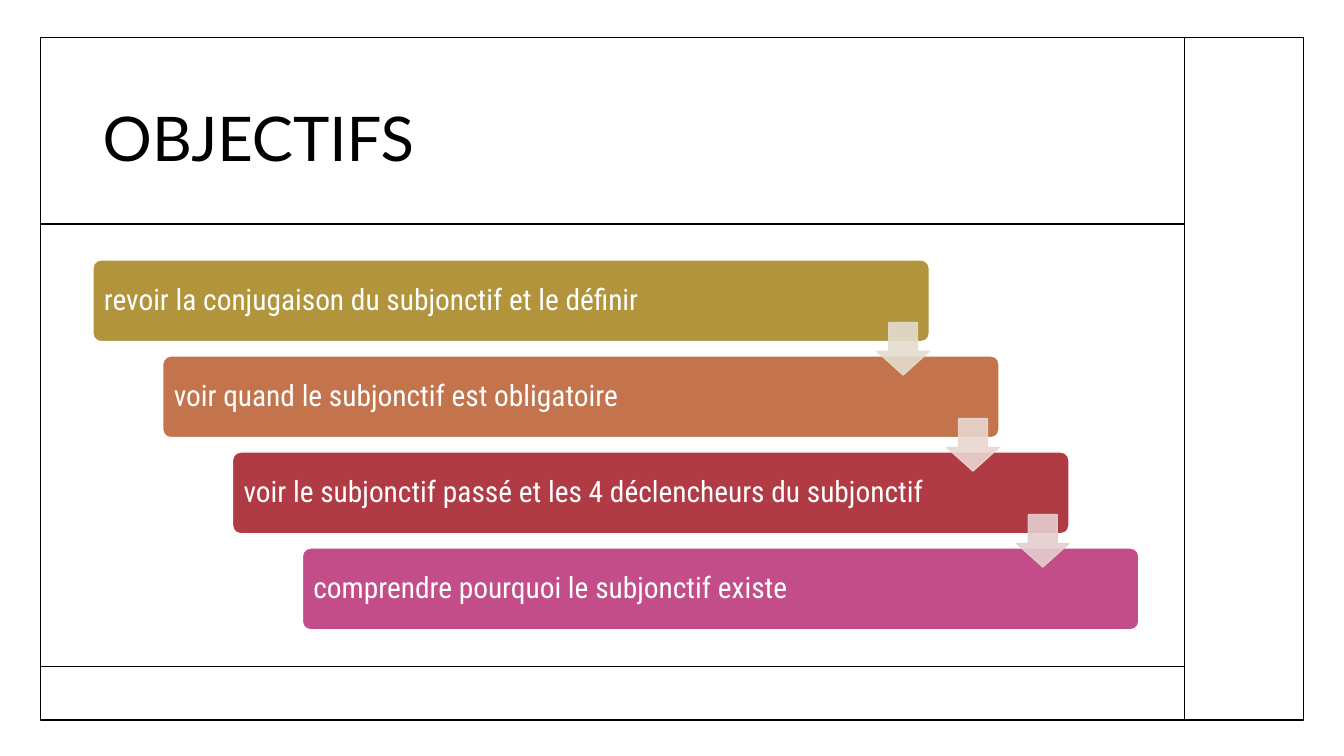
"""Build the "Objectifs" slide: a ruled frame and a staircase of four steps."""
from dataclasses import dataclass

import lxml.etree
import pptx
import pptx.dml.color
import pptx.enum.shapes
import pptx.enum.text
import pptx.oxml.ns
import pptx.util

Cm = pptx.util.Cm
SHAPES = pptx.enum.shapes.MSO_SHAPE

COLOURS: dict[str, str] = {
    "ink": "000000",
    "paper": "FFFFFF",
    "ochre": "B1943B",
    "orange": "C3744D",
    "red": "B13B44",
    "pink": "C34D88",
    "pale ochre": "E4DCCE",
    "pale orange": "E9D6D0",
    "pale red": "E4CECF",
}

FRAME_LEFT, FRAME_TOP, FRAME_WIDTH, FRAME_HEIGHT = 1.02, 0.94, 31.83, 17.2
MARGIN_X = 29.85
STEP_X, STEP_Y = 1.76, 2.42
BAR_LEFT, BAR_TOP, BAR_WIDTH, BAR_HEIGHT = 2.34, 6.55, 21.08, 2.06
ARROW_LEFT, ARROW_TOP, ARROW_SIZE = 22.1, 8.13, 1.32


@dataclass(frozen=True)
class Rule:
    x1: float
    y1: float
    x2: float
    y2: float


@dataclass(frozen=True)
class Step:
    text: str
    colour: str


RULES = [
    Rule(FRAME_LEFT, 5.64, MARGIN_X, 5.64),
    Rule(FRAME_LEFT, 16.79, MARGIN_X, 16.79),
    Rule(MARGIN_X, FRAME_TOP, MARGIN_X, FRAME_TOP + FRAME_HEIGHT),
]

STEPS = [
    Step("revoir la conjugaison du subjonctif et le définir", "ochre"),
    Step("voir quand le subjonctif est obligatoire", "orange"),
    Step("voir le subjonctif passé et les 4 déclencheurs du subjonctif", "red"),
    Step("comprendre pourquoi le subjonctif existe", "pink"),
]


def rgb(name: str) -> pptx.dml.color.RGBColor:
    return pptx.dml.color.RGBColor.from_string(COLOURS[name])


def write_text(shape, text: str, *, font: str, size: float, colour: str, inset: float) -> None:
    frame = shape.text_frame
    frame.word_wrap = True
    frame.vertical_anchor = pptx.enum.text.MSO_ANCHOR.MIDDLE
    frame.margin_left = frame.margin_right = Cm(inset)
    para = frame.paragraphs[0]
    para.alignment = pptx.enum.text.PP_ALIGN.LEFT
    para.line_spacing = 0.9
    span = para.add_run()
    span.text = text
    span.font.name = font
    span.font.size = pptx.util.Pt(size)
    span.font.color.rgb = rgb(colour)


def add_box(page, kind, left: float, top: float, width: float, height: float,
            *, fill: str | None, line: str, adjustments: tuple[float, ...] = ()):
    box = page.shapes.add_shape(kind, Cm(left), Cm(top), Cm(width), Cm(height))
    box.shadow.inherit = False
    for index, value in enumerate(adjustments):
        box.adjustments[index] = value
    if fill is None:
        box.fill.background()
    else:
        box.fill.solid()
        box.fill.fore_color.rgb = rgb(fill)
    box.line.color.rgb = rgb(line)
    box.line.width = pptx.util.Pt(1)
    return box


def set_opacity(shape, percent: int) -> None:
    qn = pptx.oxml.ns.qn
    for colour in shape._element.spPr.iter(qn("a:srgbClr")):
        lxml.etree.SubElement(colour, qn("a:alpha")).set("val", str(percent * 1000))


def add_rule(page, rule: Rule) -> None:
    line = page.shapes.add_connector(
        pptx.enum.shapes.MSO_CONNECTOR.STRAIGHT,
        Cm(rule.x1), Cm(rule.y1), Cm(rule.x2), Cm(rule.y2))
    line.line.color.rgb = rgb("ink")
    line.line.width = pptx.util.Pt(1)
    lxml.etree.SubElement(line._element.spPr, pptx.oxml.ns.qn("a:effectLst"))


def add_bar(page, index: int, step: Step) -> None:
    bar = add_box(page, SHAPES.ROUNDED_RECTANGLE,
                  BAR_LEFT + index * STEP_X, BAR_TOP + index * STEP_Y, BAR_WIDTH, BAR_HEIGHT,
                  fill=step.colour, line="paper", adjustments=(0.1,))
    write_text(bar, step.text, font="Roboto Condensed", size=21, colour="paper", inset=0.22)


def add_arrow(page, index: int, colour: str) -> None:
    arrow = add_box(page, SHAPES.DOWN_ARROW,
                    ARROW_LEFT + index * STEP_X, ARROW_TOP + index * STEP_Y,
                    ARROW_SIZE, ARROW_SIZE,
                    fill=colour, line=colour, adjustments=(0.45, 0.55))
    arrow.adjustments[0] = 0.55
    arrow.adjustments[1] = 0.45
    set_opacity(arrow, 90)


def main() -> None:
    deck = pptx.Presentation()
    deck.slide_width, deck.slide_height = Cm(33.87), Cm(19.05)
    page = deck.slides.add_slide(deck.slide_layouts[6])

    add_box(page, SHAPES.RECTANGLE, FRAME_LEFT, FRAME_TOP, FRAME_WIDTH, FRAME_HEIGHT,
            fill=None, line="ink")
    title = page.shapes.add_textbox(Cm(2.34), Cm(2.26), Cm(26.37), Cm(2.59))
    write_text(title, "OBJECTIFS", font="Lato", size=44, colour="ink", inset=0.25)
    for rule in RULES:
        add_rule(page, rule)
    for index, step in enumerate(STEPS):
        add_bar(page, index, step)
    for index, step in enumerate(STEPS[:-1]):
        add_arrow(page, index, f"pale {step.colour}")

    deck.save("out.pptx")


if __name__ == "__main__":
    main()
